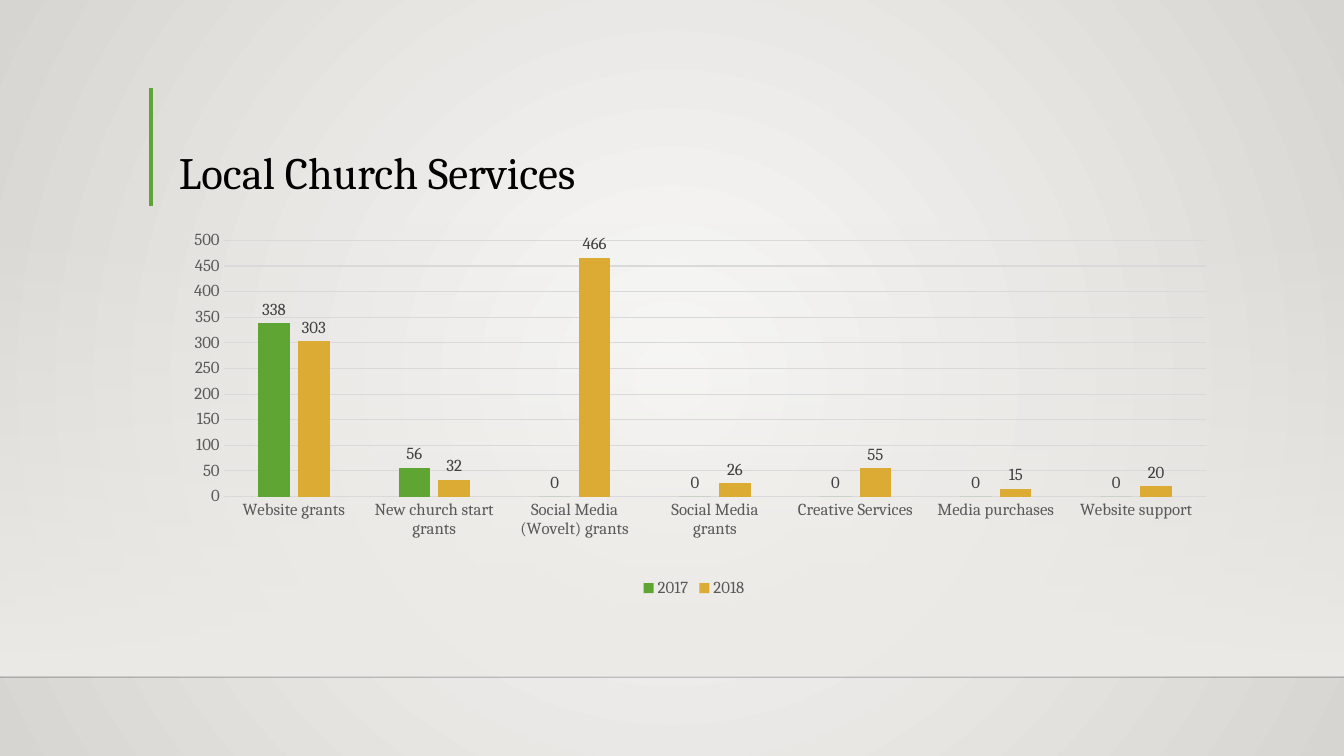
from dataclasses import dataclass

from lxml import etree
from pptx import Presentation
from pptx.chart.data import CategoryChartData
from pptx.dml.color import RGBColor
from pptx.enum.chart import XL_CHART_TYPE, XL_LABEL_POSITION, XL_LEGEND_POSITION, XL_TICK_MARK
from pptx.enum.shapes import MSO_CONNECTOR, MSO_SHAPE
from pptx.enum.text import MSO_ANCHOR
from pptx.oxml import parse_xml
from pptx.oxml.ns import nsdecls, qn
from pptx.util import Pt

COLUMNS = XL_CHART_TYPE.COLUMN_CLUSTERED
OUTSIDE = XL_LABEL_POSITION.OUTSIDE_END
BELOW = XL_LEGEND_POSITION.BOTTOM
NO_TICK = XL_TICK_MARK.NONE
STRAIGHT = MSO_CONNECTOR.STRAIGHT
RECTANGLE = MSO_SHAPE.RECTANGLE
BOTTOM = MSO_ANCHOR.BOTTOM

EMU_PER_PX = 9525
WIDTH, HEIGHT = 1280, 720
CONTENT_LEFT, CONTENT_WIDTH = 161, 1000
CHART_TOP, CHART_HEIGHT = 211, 362
FONT = "Cambria"
COLORS = {
    "glow": "FAFAF9",
    "edge": "D7D5D2",
    "wall": "EDEBE7",
    "floor": "000001",
    "title": "000000",
    "green": "5FA534",
    "gold": "DCAB34",
    "axis": "595959",
    "label": "404040",
    "grid": "D9D9D9",
}
CATEGORIES = [
    "Website grants",
    "New church start grants",
    "Social Media (Wovelt) grants",
    "Social Media grants",
    "Creative Services",
    "Media purchases",
    "Website support",
]
PLOT_AREA = {
    "x": 52 / CONTENT_WIDTH,
    "y": 18 / CHART_HEIGHT,
    "w": 936 / CONTENT_WIDTH,
    "h": 244 / CHART_HEIGHT,
}


@dataclass(frozen=True)
class Rule:
    start: tuple[int, int]
    end: tuple[int, int]
    color: str
    weight: float
    opacity: int = 100


@dataclass(frozen=True)
class Year:
    name: str
    counts: tuple[int, ...]
    color: str


@dataclass(frozen=True)
class Stop:
    position: int
    color: str
    opacity: int = 100


RULES = [
    Rule((0, 645), (WIDTH, 645), "floor", 1, 20),
    Rule((144, 84), (144, 196), "green", 3),
]
YEARS = [
    Year("2017", (338, 56, 0, 0, 0, 0, 0), "green"),
    Year("2018", (303, 32, 466, 26, 55, 15, 20), "gold"),
]
RADIAL = '<a:path path="circle"><a:fillToRect l="50000" t="50000" r="50000" b="50000"/></a:path>'
DOWNWARD = '<a:lin ang="5400000" scaled="0"/>'


def px(*lengths: int) -> list[int]:
    return [length * EMU_PER_PX for length in lengths]


def rgb(color: str) -> RGBColor:
    return RGBColor.from_string(COLORS[color])


def set_gradient(fill, element, stops: list[Stop], direction: str) -> None:
    fill.gradient()
    stop_xml = "".join(
        f'<a:gs pos="{stop.position * 1000}"><a:srgbClr val="{COLORS[stop.color]}">'
        f'<a:alpha val="{stop.opacity * 1000}"/></a:srgbClr></a:gs>'
        for stop in stops
    )
    gradient = element.xpath(".//a:gradFill")[0]
    gradient.getparent().replace(gradient, parse_xml(
        f'<a:gradFill {nsdecls("a")} rotWithShape="1"><a:gsLst>{stop_xml}</a:gsLst>{direction}</a:gradFill>'
    ))


def style_font(font, size: float, color: str) -> None:
    font.name = FONT
    font.size = Pt(size)
    font.bold = False
    font.color.rgb = rgb(color)


def style_line(line, color: str, weight: float) -> None:
    line.color.rgb = rgb(color)
    line.width = Pt(weight)


def add_wall(slide) -> None:
    wall = slide.shapes.add_shape(RECTANGLE, *px(0, 211, WIDTH, 432))
    wall.shadow.inherit = False
    set_gradient(wall.fill, wall.element, [Stop(0, "wall", 0), Stop(100, "wall")], DOWNWARD)
    wall.line.fill.background()


def add_rule(slide, rule: Rule) -> None:
    connector = slide.shapes.add_connector(STRAIGHT, *px(*rule.start, *rule.end))
    style_line(connector.line, rule.color, rule.weight)
    line_color = connector.element.xpath(".//a:ln//a:srgbClr")[0]
    etree.SubElement(line_color, qn("a:alpha")).set("val", str(rule.opacity * 1000))
    etree.SubElement(connector.element.spPr, qn("a:effectLst"))


def add_text(slide, text: str, *, box: tuple[int, int, int, int], size: float,
             color: str, anchor: MSO_ANCHOR, spacing: float) -> None:
    frame = slide.shapes.add_textbox(*px(*box)).text_frame
    frame.word_wrap = True
    frame.vertical_anchor = anchor
    paragraph = frame.paragraphs[0]
    paragraph.text = text
    paragraph.line_spacing = spacing
    style_font(paragraph.font, size, color)


def place_plot(chart) -> None:
    plot_area = chart.element.xpath(".//c:plotArea")[0]
    for layout in plot_area.findall(qn("c:layout")):
        plot_area.remove(layout)
    sizes = "".join(f'<c:{side} val="{share}"/>' for side, share in PLOT_AREA.items())
    plot_area.insert(0, parse_xml(
        f'<c:layout {nsdecls("c")}><c:manualLayout><c:layoutTarget val="inner"/>'
        f'<c:xMode val="edge"/><c:yMode val="edge"/>{sizes}</c:manualLayout></c:layout>'
    ))


def add_services_chart(slide) -> None:
    services = CategoryChartData(number_format="General")
    services.categories = CATEGORIES
    for year in YEARS:
        services.add_series(year.name, year.counts)
    box = px(CONTENT_LEFT, CHART_TOP, CONTENT_WIDTH, CHART_HEIGHT)
    chart = slide.shapes.add_chart(COLUMNS, *box, services).chart
    chart.has_title = False
    style_font(chart.font, 10, "title")
    place_plot(chart)

    plot = chart.plots[0]
    plot.gap_width = 219
    plot.overlap = -27
    plot.vary_by_categories = False
    for series, year in zip(plot.series, YEARS):
        series.format.fill.solid()
        series.format.fill.fore_color.rgb = rgb(year.color)
        series.invert_if_negative = False
        labels = series.data_labels
        labels.show_value = True
        labels.position = OUTSIDE
        style_font(labels.font, 12, "label")

    for axis in (chart.category_axis, chart.value_axis):
        axis.major_tick_mark = NO_TICK
        axis.minor_tick_mark = NO_TICK
        style_font(axis.tick_labels.font, 12, "axis")
    style_line(chart.category_axis.format.line, "grid", 0.75)
    counts = chart.value_axis
    counts.format.line.fill.background()
    counts.minimum_scale = 0
    counts.maximum_scale = 500
    counts.major_unit = 50
    style_line(counts.major_gridlines.format.line, "grid", 0.75)

    chart.has_legend = True
    chart.legend.position = BELOW
    chart.legend.include_in_layout = False
    style_font(chart.legend.font, 12, "axis")


def main() -> None:
    presentation = Presentation()
    presentation.slide_width, presentation.slide_height = px(WIDTH, HEIGHT)
    slide = presentation.slides.add_slide(presentation.slide_layouts[6])
    set_gradient(slide.background.fill, slide.element, [Stop(0, "glow"), Stop(100, "edge")], RADIAL)
    add_wall(slide)
    for rule in RULES:
        add_rule(slide, rule)
    add_text(slide, "Local Church Services", box=(CONTENT_LEFT, 84, CONTENT_WIDTH, 110),
             size=32, color="title", anchor=BOTTOM, spacing=0.9)
    add_services_chart(slide)
    presentation.save("out.pptx")


if __name__ == "__main__":
    main()
